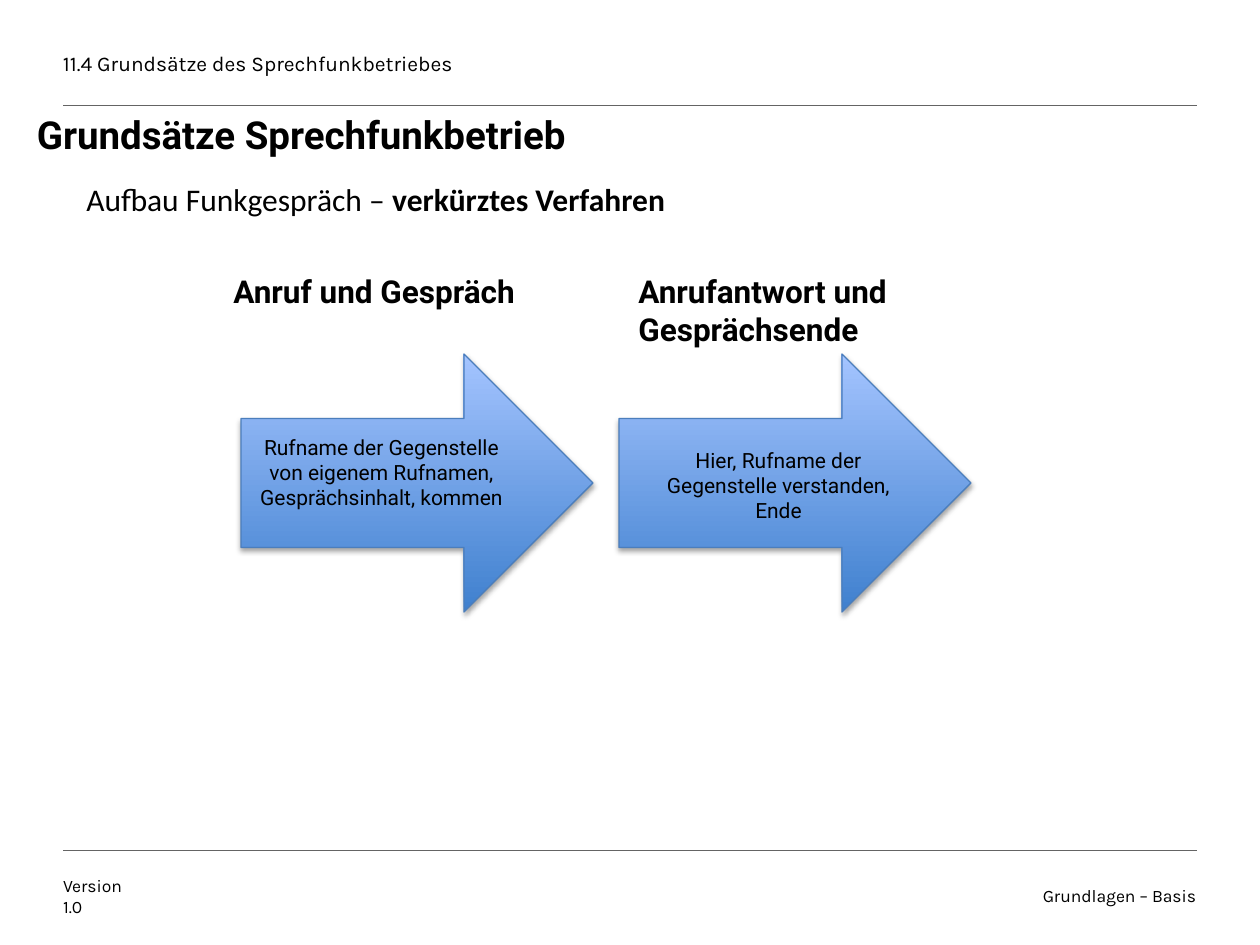
from lxml.etree import SubElement
from pptx import Presentation
from pptx.dml.color import RGBColor
from pptx.enum.shapes import MSO_CONNECTOR, MSO_SHAPE
from pptx.enum.text import MSO_ANCHOR, MSO_AUTO_SIZE, PP_ALIGN
from pptx.oxml.ns import qn
from pptx.util import Emu, Pt

PX_PER_INCH = 126
MARGIN_LEFT, MARGIN_RIGHT = 63, 1197
FOOTER_TOP, FOOTER_HEIGHT = 868, 55
ARROW_TOP, ARROW_WIDTH, ARROW_HEIGHT = 354, 352, 258

SMALL = {"name": "Karla", "size": Pt(10)}
HEADER = {"name": "Karla", "size": Pt(12)}
TITLE = {"name": "Roboto", "size": Pt(22), "bold": True}
SUBTITLE = {"name": "Calibri", "size": Pt(18)}
STEP_HEADING = {"name": "Roboto", "size": Pt(18), "bold": True}
STEP_TEXT = {"name": "Roboto", "size": Pt(12)}

FLUSH = {"margin_left": 0, "margin_right": 0, "margin_top": 0, "margin_bottom": 0}
CENTRED_FLUSH = {**FLUSH, "vertical_anchor": MSO_ANCHOR.MIDDLE}
GROWING = {"auto_size": MSO_AUTO_SIZE.SHAPE_TO_FIT_TEXT}

# Arrow left, heading, heading box, message, message box
STEPS = [
    (241, "Anruf und Gespräch", (221, 266, 367, 50),
     "Rufname der Gegenstelle von eigenem Rufnamen, Gesprächsinhalt, kommen",
     (233, 428, 297, 89)),
    (619, "Anrufantwort und Gesprächsende", (626, 266, 407, 90),
     "Hier, Rufname der Gegenstelle verstanden, Ende",
     (630, 441, 297, 63)),
]


def px(length):
    return Emu(round(length * 914400 / PX_PER_INCH))


def color(hex_value):
    return RGBColor.from_string(hex_value)


def apply(target, values):
    for name, value in values.items():
        setattr(target, name, value)


def add_text(slide, box, paragraphs, font, frame_format, **paragraph_format):
    """Add a text box; each paragraph is a list of (text, font changes) runs."""
    frame = slide.shapes.add_textbox(*map(px, box)).text_frame
    apply(frame, {"word_wrap": True, **frame_format})
    for index, runs in enumerate(paragraphs):
        paragraph = frame.add_paragraph() if index else frame.paragraphs[0]
        apply(paragraph, paragraph_format)
        for text, changes in runs:
            run = paragraph.add_run()
            run.text = text
            apply(run.font, {**font, **changes})
            run.font.color.rgb = color("000000")


def add_rule(slide, y):
    rule = slide.shapes.add_connector(
        MSO_CONNECTOR.STRAIGHT, px(MARGIN_LEFT), px(y), px(MARGIN_RIGHT), px(y))
    rule.line.color.rgb = color("646464")
    rule.line.width = Pt(0.25)
    SubElement(rule._element.spPr, qn("a:effectLst"))


def add_soft_shadow(shape):
    shape.shadow.inherit = False
    effects = shape._element.spPr.find(qn("a:effectLst"))
    shadow = SubElement(effects, qn("a:outerShdw"), blurRad="40000",
                        dist="23000", dir="5400000", rotWithShape="0")
    shade = SubElement(shadow, qn("a:srgbClr"), val="000000")
    SubElement(shade, qn("a:alpha"), val="35000")


def add_arrow(slide, left):
    arrow = slide.shapes.add_shape(
        MSO_SHAPE.RIGHT_ARROW,
        *map(px, (left, ARROW_TOP, ARROW_WIDTH, ARROW_HEIGHT)))
    arrow.fill.gradient()
    arrow.fill.gradient_angle = 90
    for stop, shade in zip(arrow.fill.gradient_stops, ("3F80CE", "A4C4FF")):
        stop.color.rgb = color(shade)
    arrow.line.color.rgb = color("4B7EBC")
    arrow.line.width = Pt(0.75)
    add_soft_shadow(arrow)


def add_header_and_footer(slide):
    add_rule(slide, 105)
    add_text(slide, (MARGIN_LEFT, 42, 766, 42),
             [[("11.4 Grundsätze des Sprechfunkbetriebes", {})]],
             HEADER, CENTRED_FLUSH)
    add_rule(slide, 850)
    add_text(slide, (MARGIN_LEFT, FOOTER_TOP, 71, FOOTER_HEIGHT),
             [[("Version", {})], [("1.0", {})]], SMALL, CENTRED_FLUSH)
    add_text(slide, (1017, FOOTER_TOP, 179, FOOTER_HEIGHT),
             [[("Grundlagen – Basis", {})]], SMALL, CENTRED_FLUSH,
             alignment=PP_ALIGN.RIGHT)


def main():
    presentation = Presentation()
    presentation.slide_width, presentation.slide_height = px(1260), px(945)
    slide = presentation.slides.add_slide(presentation.slide_layouts[6])

    add_header_and_footer(slide)
    add_text(slide, (37, 115, 930, 84), [[("Grundsätze Sprechfunkbetrieb", {})]],
             TITLE, FLUSH, line_spacing=Pt(24))
    add_text(slide, (74, 174, 684, 50),
             [[("Aufbau Funkgespräch – ", {}),
               ("verkürztes Verfahren", {"bold": True})]],
             SUBTITLE, GROWING)

    for arrow_left, heading, heading_box, message, message_box in STEPS:
        add_arrow(slide, arrow_left)
        add_text(slide, heading_box, [[(heading, {})]], STEP_HEADING, GROWING)
        add_text(slide, message_box, [[(message, {})]], STEP_TEXT, GROWING,
                 alignment=PP_ALIGN.CENTER)

    presentation.save("out.pptx")


if __name__ == "__main__":
    main()
